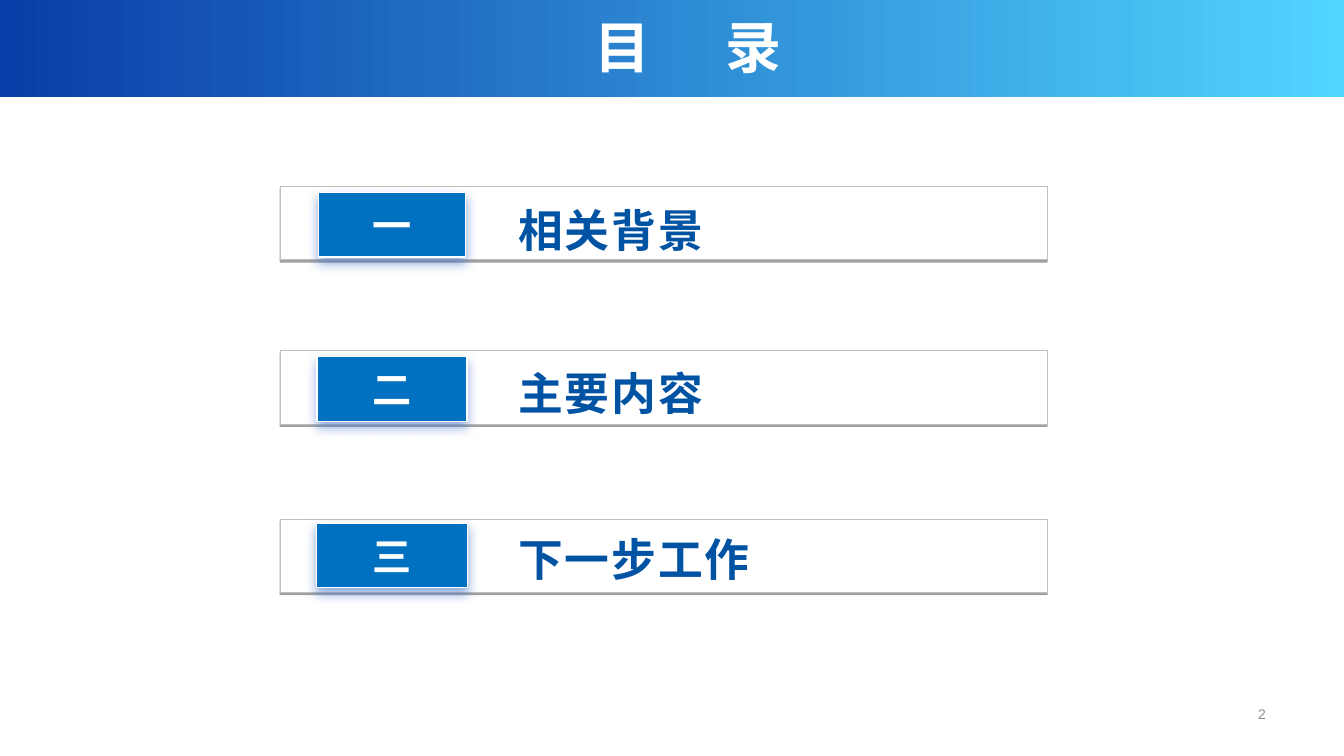
from dataclasses import dataclass

from lxml import etree
from pptx import Presentation
from pptx import util as u
from pptx.dml.color import RGBColor
from pptx.enum import shapes, text
from pptx.oxml import ns


@dataclass(frozen=True)
class Theme:
    band_start: str = "093DA7"
    band_end: str = "51D4FF"
    white: str = "FFFFFF"
    frame_line: str = "BFBFBF"
    badge: str = "0070C0"
    label: str = "0053A3"
    page: str = "8C8C8C"
    # colour, opacity %, blur pt, distance pt
    frame_shadow: tuple = ("000000", 37, 0, 1.6)
    badge_shadow: tuple = ("4874CB", 60, 8, 4)
    cjk: str = "Noto Sans CJK SC"
    latin: str = "Arial"
    title_size: int = 40
    label_size: int = 32
    badge_size: int = 28
    page_size: int = 10


class AgendaSlide:
    def __init__(self, deck, theme):
        self.theme = theme
        self.slide = deck.slides.add_slide(deck.slide_layouts[6])

    def box(self, left, top, width, height):
        """A plain rectangle without line or shadow."""
        rect = self.slide.shapes.add_shape(
            shapes.MSO_SHAPE.RECTANGLE, *map(u.Cm, (left, top, width, height)))
        rect.shadow.inherit = False
        rect.line.fill.background()
        return rect

    def band(self, *place):
        fill = self.box(*place).fill
        fill.gradient()
        fill.gradient_angle = 0
        ends = (self.theme.band_start, self.theme.band_end)
        for stop, colour in zip(fill.gradient_stops, ends):
            stop.color.rgb = RGBColor.from_string(colour)

    def card(self, place, fill, line, line_width, shadow):
        rect = self.box(*place)
        rect.fill.solid()
        rect.fill.fore_color.rgb = RGBColor.from_string(fill)
        rect.line.color.rgb = RGBColor.from_string(line)
        rect.line.width = u.Pt(line_width)
        self.drop_shadow(rect, *shadow)
        return rect

    def drop_shadow(self, rect, colour, opacity, blur, distance):
        effects = rect._element.spPr.find(ns.qn("a:effectLst"))
        outer = etree.SubElement(
            effects, ns.qn("a:outerShdw"), blurRad=str(u.Pt(blur)),
            dist=str(u.Pt(distance)), dir="5400000", algn="t", rotWithShape="0")
        tint = etree.SubElement(outer, ns.qn("a:srgbClr"), val=colour)
        etree.SubElement(tint, ns.qn("a:alpha"), val=str(opacity * 1000))

    def text_box(self, *place):
        frame = self.slide.shapes.add_textbox(*map(u.Cm, place)).text_frame
        frame.word_wrap = True
        return frame

    def inset(self, frame):
        frame.margin_left = frame.margin_right = u.Cm(0.33)
        frame.margin_top = frame.margin_bottom = u.Cm(0.18)

    def style(self, run, size, colour, face=None, bold=True, spacing=0):
        face = face or self.theme.cjk
        run.font.size = u.Pt(size)
        run.font.bold = bold
        run.font.color.rgb = RGBColor.from_string(colour)
        run.font.name = face
        props = run._r.get_or_add_rPr()
        etree.SubElement(props, ns.qn("a:ea"), typeface=face)
        if spacing:
            props.set("spc", str(round(spacing * 100)))

    def title(self, first, last, gap, *place):
        """Two characters held apart by one widened space."""
        frame = self.text_box(*place)
        frame.auto_size = text.MSO_AUTO_SIZE.SHAPE_TO_FIT_TEXT
        line = frame.paragraphs[0]
        line.alignment = text.PP_ALIGN.CENTER
        for part, spacing in ((first, 0), (" ", gap), (last, 0)):
            run = line.add_run()
            run.text = part
            self.style(run, self.theme.title_size, self.theme.white, spacing=spacing)

    def badge(self, numeral, *place):
        theme = self.theme
        frame = self.card(place, theme.badge, theme.white, 1, theme.badge_shadow).text_frame
        self.inset(frame)
        frame.word_wrap = False
        frame.vertical_anchor = text.MSO_ANCHOR.MIDDLE
        frame.text = numeral
        frame.paragraphs[0].alignment = text.PP_ALIGN.CENTER
        self.style(frame.paragraphs[0].runs[0], theme.badge_size, theme.white)

    def label(self, heading, *place):
        frame = self.text_box(*place)
        self.inset(frame)
        frame.auto_size = text.MSO_AUTO_SIZE.SHAPE_TO_FIT_TEXT
        frame.text = heading
        frame.paragraphs[0].alignment = text.PP_ALIGN.JUSTIFY
        self.style(frame.paragraphs[0].runs[0], self.theme.label_size,
                   self.theme.label, spacing=1.3)

    def page_number(self, number, *place):
        frame = self.text_box(*place)
        frame.vertical_anchor = text.MSO_ANCHOR.MIDDLE
        frame.text = number
        frame.paragraphs[0].alignment = text.PP_ALIGN.RIGHT
        self.style(frame.paragraphs[0].runs[0], self.theme.page_size,
                   self.theme.page, self.theme.latin, bold=False)


# numeral, heading, frame top, badge top, badge width, label top
SECTIONS = (
    ("一", "相关背景", 4.7, 4.85, 3.71, 4.93),
    ("二", "主要内容", 8.84, 8.99, 3.78, 9.04),
    ("三", "下一步工作", 13.08, 13.18, 3.81, 13.23),
)
BADGE_CENTRE = 9.88


def main():
    deck = Presentation()
    deck.slide_width, deck.slide_height = u.Cm(33.87), u.Cm(19.05)
    theme = Theme()
    agenda = AgendaSlide(deck, theme)

    # Header band, page number and title
    agenda.band(0, 0, 33.9, 2.44)
    agenda.page_number("2", 24.66, 17.55, 7.49, 0.89)
    agenda.title("目", "录", 45, 0.79, 0.18, 33.1, 1.96)

    # Agenda rows
    for numeral, heading, frame_top, badge_top, badge_width, label_top in SECTIONS:
        agenda.card((7.06, frame_top, 19.33, 1.85), theme.white,
                    theme.frame_line, 0.75, theme.frame_shadow)
        agenda.badge(numeral, BADGE_CENTRE - badge_width / 2, badge_top, badge_width, 1.63)
        agenda.label(heading, 12.73, label_top, 10.95, 1.7)

    deck.save("out.pptx")


if __name__ == "__main__":
    main()
